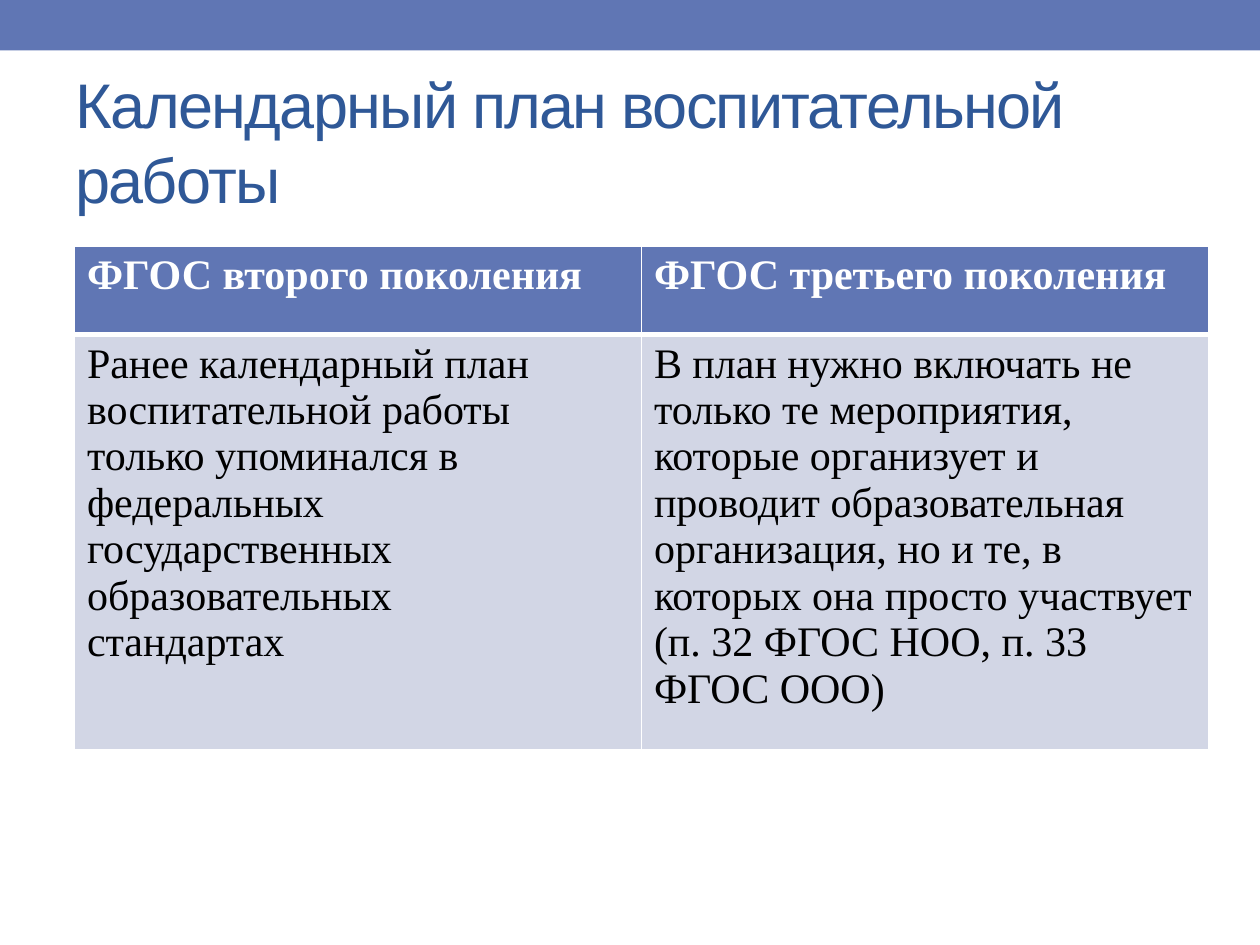
from lxml.etree import SubElement
from pptx import Presentation
from pptx.dml.color import RGBColor
from pptx.enum.shapes import MSO_SHAPE as Shape
from pptx.enum.text import MSO_ANCHOR as Anchor
from pptx.oxml.ns import qn
from pptx.util import Cm, Pt

BLUE, NAVY, PALE = "6076B4", "2F5897", "D2D6E5"
WHITE, BLACK = "FFFFFF", "000000"


def paint(fill, color):
    fill.solid()
    fill.fore_color.rgb = RGBColor.from_string(color)


def write(frame, *lines, font="Times New Roman", size=24, color=BLACK,
          bold=False, spacing=0):
    frame.word_wrap = True
    for index, line in enumerate(lines):
        para = frame.paragraphs[0] if index == 0 else frame.add_paragraph()
        span = para.add_run()
        span.text = line
        span.font.name = font
        span.font.size = Pt(size)
        span.font.bold = bold
        paint(span.font.fill, color)
        if spacing:
            span.font._element.set("spc", str(spacing * 100))


deck = Presentation()
deck.slide_width, deck.slide_height = Cm(25.4), Cm(19.05)
page = deck.slides.add_slide(deck.slide_layouts[6])

# Top band
band = page.shapes.add_shape(Shape.RECTANGLE, 0, 0, deck.slide_width, Cm(1.02))
band.shadow.inherit = False
paint(band.fill, BLUE)
band.line.fill.background()

# Title
box = page.shapes.add_textbox(Cm(1.27), Cm(1.47), Cm(22.86), Cm(2.74))
box.text_frame.vertical_anchor = Anchor.MIDDLE
write(box.text_frame, "Календарный план воспитательной работы",
      font="Arial", size=36, color=NAVY, spacing=-1)

# Comparison of the two generations of standards
rows = [
    [["ФГОС второго поколения"], ["ФГОС третьего поколения"]],
    [["Ранее календарный план",
      "воспитательной работы только упоминался в федеральных "
      "государственных образовательных",
      "стандартах"],
     ["В план нужно включать не только те мероприятия, которые организует "
      "и проводит образовательная организация, но и те, в которых она "
      "просто участвует (п. 32 ФГОС НОО, п. 33 ФГОС ООО)"]],
]
table = page.shapes.add_table(2, 2, Cm(1.5), Cm(4.96), Cm(22.86), Cm(8.2)).table
table.rows[0].height, table.rows[1].height = Cm(1.78), Cm(6.42)

for row, texts in enumerate(rows):
    header = row == 0
    for column, lines in enumerate(texts):
        cell = table.cell(row, column)
        write(cell.text_frame, *lines, bold=header,
              color=WHITE if header else BLACK)

        # White borders, thick between the header and the body
        thick = "lnB" if header else "lnT"
        for side in ("lnL", "lnR", "lnT", "lnB"):
            border = SubElement(cell._tc.get_or_add_tcPr(), qn(f"a:{side}"),
                                w=str(Pt(3 if side == thick else 1)))
            solid = SubElement(border, qn("a:solidFill"))
            SubElement(solid, qn("a:srgbClr"), val=WHITE)
        paint(cell.fill, BLUE if header else PALE)

deck.save("out.pptx")
